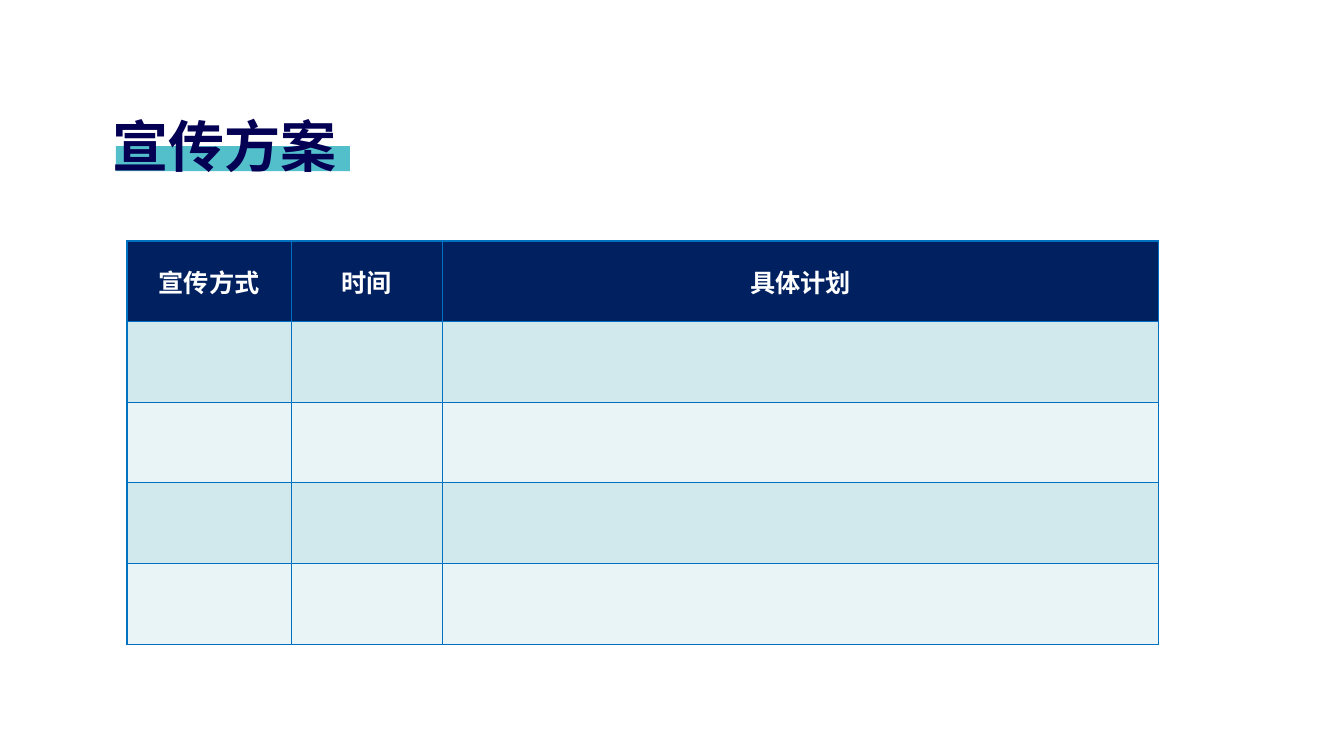
from lxml.etree import SubElement
from pptx import Presentation
from pptx.dml.color import RGBColor
from pptx.enum.shapes import MSO_SHAPE
from pptx.enum.text import MSO_ANCHOR, PP_ALIGN
from pptx.oxml.ns import qn
from pptx.util import Inches, Pt


def tint(code):
    return RGBColor.from_string(code)


def paint(item, code):
    item.fill.solid()
    item.fill.fore_color.rgb = tint(code)


class Deck:
    navy, ink, teal, edge, white = "002060", "040054", "53BFCB", "0070C0", "FFFFFF"
    bands = ("D1E8EC", "E9F4F6")
    face = "Arial"

    def __init__(self):
        self.prs = Presentation()
        self.prs.slide_width = Inches(13.33)
        self.prs.slide_height = Inches(7.5)
        self.slide = self.prs.slides.add_slide(self.prs.slide_layouts[6])

    def wide(self, share):
        return round(self.prs.slide_width * share / 100)

    def high(self, share):
        return round(self.prs.slide_height * share / 100)

    def place(self, x, y, w, h):
        """Turn percentages of the slide into lengths."""
        return self.wide(x), self.high(y), self.wide(w), self.high(h)

    def label(self, para, text, size, code):
        run = para.add_run()
        run.text = text
        look = {"name": self.face, "size": Pt(size), "bold": True}
        for key, value in look.items():
            setattr(run.font, key, value)
        run.font.color.rgb = tint(code)

    def bar(self, box, code):
        shape = self.slide.shapes.add_shape(MSO_SHAPE.RECTANGLE, *self.place(*box))
        shape.shadow.inherit = False
        paint(shape, code)
        shape.line.fill.background()

    def title(self, box, text):
        frame = self.slide.shapes.add_textbox(*self.place(*box)).text_frame
        frame.word_wrap = True
        frame.vertical_anchor = MSO_ANCHOR.BOTTOM
        para = frame.paragraphs[0]
        para.line_spacing = 0.9
        self.label(para, text, 40, self.ink)

    def rule(self, cell):
        """Draw all four borders of a cell."""
        props = cell._tc.get_or_add_tcPr()
        for side in ("lnL", "lnR", "lnT", "lnB"):
            line = SubElement(props, qn(f"a:{side}"), w=str(Pt(1)))
            fill = SubElement(line, qn("a:solidFill"))
            SubElement(fill, qn("a:srgbClr"), val=self.edge)

    def table(self, x, y, cols, row, count, heads):
        box = self.place(x, y, sum(cols), row * count)
        grid = self.slide.shapes.add_table(count, len(cols), *box).table
        for col, share in zip(grid.columns, cols):
            col.width = self.wide(share)
        for i, line in enumerate(grid.rows):
            line.height = self.high(row)
            for cell in line.cells:
                self.rule(cell)
                paint(cell, self.bands[(i - 1) % 2] if i else self.navy)
        for cell, text in zip(grid.rows[0].cells, heads):
            cell.vertical_anchor = MSO_ANCHOR.MIDDLE
            para = cell.text_frame.paragraphs[0]
            para.alignment = PP_ALIGN.CENTER
            self.label(para, text, 18, self.white)


def main():
    deck = Deck()
    # Title over its highlight bar
    deck.bar((8.63, 19.33, 17.4, 3.33), deck.teal)
    deck.title((7.65, 11.33, 44.49, 13.07), "宣传方案")
    # Plan table
    deck.table(9.45, 31.87, (12.23, 11.25, 53.26), 10.67, 5,
               ("宣传方式", "时间", "具体计划"))
    deck.prs.save("out.pptx")


if __name__ == "__main__":
    main()
